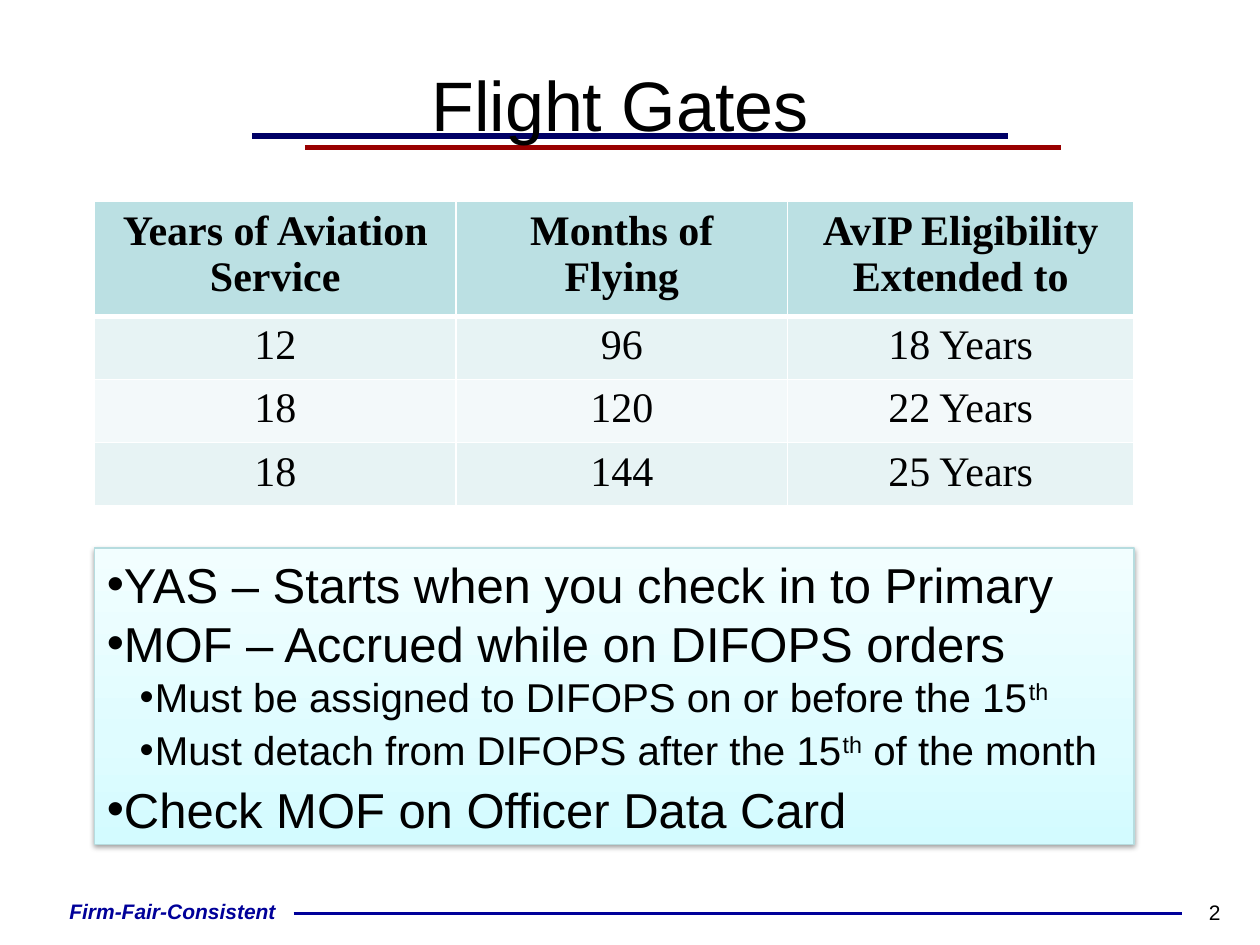
from dataclasses import dataclass

from lxml import etree
from pptx import Presentation
from pptx.dml.color import RGBColor
from pptx.enum.shapes import MSO_CONNECTOR, MSO_SHAPE
from pptx.enum.text import MSO_ANCHOR, PP_ALIGN
from pptx.oxml import parse_xml
from pptx.oxml.ns import nsdecls, qn
from pptx.util import Inches, Pt

LINE = MSO_CONNECTOR.STRAIGHT
RECT = MSO_SHAPE.RECTANGLE
MID, TOP = MSO_ANCHOR.MIDDLE, MSO_ANCHOR.TOP
CENTER = PP_ALIGN.CENTER
SANS, SERIF = "Arial", "Times New Roman"
NAVY = "000099"


@dataclass
class Rule:
    left: float
    right: float
    y: float
    color: str
    width: float


@dataclass
class Label:
    text: str
    box: tuple
    font: dict
    anchor: int = TOP
    inset: bool = True


@dataclass
class Point:
    level: int
    runs: tuple  # every second run is superscript


RULES = [
    Rule(2, 8, 1.08, "000066", 3),
    Rule(2.42, 8.42, 1.17, "990000", 3),
    Rule(2.33, 9.38, 7.25, NAVY, 2.25),
]
LABELS = [
    Label("2", (9.32, 7.09, 0.64, 0.3), {"size": 12}),
    Label("Firm-Fair-Consistent", (0.33, 7.08, 2.08, 0.3),
          {"size": 12, "color": NAVY, "bold": True, "italic": True}, MID, False),
    Label("Flight Gates", (0.42, 0.36, 9, 0.92), {"size": 40}, MID),
]
GATES = [
    ("Years of Aviation Service", "Months of Flying", "AvIP Eligibility Extended to"),
    ("12", "96", "18 Years"),
    ("18", "120", "22 Years"),
    ("18", "144", "25 Years"),
]
COLS = [2.87, 2.63, 2.75]
ROWS = [0.91, 0.5, 0.5, 0.5]
FILLS = ["BBE0E3", "E7F3F4", "F3F9FA", "E7F3F4"]
POINTS = [
    Point(1, ("YAS – Starts when you check in to Primary",)),
    Point(1, ("MOF – Accrued while on DIFOPS orders",)),
    Point(2, ("Must be assigned to DIFOPS on or before the 15", "th")),
    Point(2, ("Must detach from DIFOPS after the 15", "th", " of the month")),
    Point(1, ("Check MOF on Officer Data Card",)),
]
# Per level: font size, left indent, space after
LEVELS = {1: (28, 0.12, 0), 2: (23, 0.38, 3)}
STOPS = [(0, "D3FBFF"), (35, "DFFCFF"), (100, "F2FEFF")]


def rgb(code: str) -> RGBColor:
    return RGBColor.from_string(code)


def style(font, size: float, color: str = "000000", **rest) -> None:
    font.color.rgb = rgb(color)
    for key, val in {"name": SANS, "size": Pt(size), **rest}.items():
        setattr(font, key, val)


def draw_rule(slide, rule: Rule) -> None:
    y = Inches(rule.y)
    line = slide.shapes.add_connector(LINE, Inches(rule.left), y, Inches(rule.right), y)
    line.line.color.rgb = rgb(rule.color)
    line.line.width = Pt(rule.width)
    etree.SubElement(line._element.spPr, qn("a:effectLst"))


def draw_label(slide, label: Label) -> None:
    frame = slide.shapes.add_textbox(*map(Inches, label.box)).text_frame
    frame.word_wrap = True
    frame.vertical_anchor = label.anchor
    if not label.inset:
        for side in ("left", "top", "right", "bottom"):
            setattr(frame, f"margin_{side}", 0)
    para = frame.paragraphs[0]
    para.alignment = CENTER
    run = para.add_run()
    run.text = label.text
    style(run.font, **label.font)


def edge(cell, head: bool) -> None:
    props = cell._tc.get_or_add_tcPr()
    for spot, side in enumerate("LRTB"):
        width = Pt(3 if head and side == "B" else 1)
        props.insert(spot, parse_xml(
            f'<a:ln{side} {nsdecls("a")} w="{width}"><a:solidFill>'
            f'<a:srgbClr val="FFFFFF"/></a:solidFill></a:ln{side}>'))


def draw_table(slide) -> None:
    box = map(Inches, (0.75, 1.6, sum(COLS), sum(ROWS)))
    table = slide.shapes.add_table(len(ROWS), len(COLS), *box).table
    for col, width in zip(table.columns, COLS):
        col.width = Inches(width)
    for r, (row, high) in enumerate(zip(table.rows, ROWS)):
        row.height = Inches(high)
        for cell, text in zip(row.cells, GATES[r]):
            cell.fill.solid()
            cell.fill.fore_color.rgb = rgb(FILLS[r])
            edge(cell, r == 0)
            para = cell.text_frame.paragraphs[0]
            para.alignment = CENTER
            run = para.add_run()
            run.text = text
            style(run.font, 24, name=SERIF, bold=r == 0)


def draw_point(para, point: Point) -> None:
    size, left, after = LEVELS[point.level]
    para.alignment = PP_ALIGN.LEFT
    para.level = point.level - 1
    para.space_after = Pt(after)
    props = para._p.get_or_add_pPr()
    props.set("marL", str(Inches(left)))
    props.set("indent", str(Inches(-0.12)))
    etree.SubElement(props, qn("a:buFont"), typeface=SANS)
    etree.SubElement(props, qn("a:buChar"), char="•")
    for i, text in enumerate(point.runs):
        run = para.add_run()
        run.text = text
        style(run.font, size)
        if i % 2:
            run._r.get_or_add_rPr().set("baseline", "30000")


def draw_panel(slide) -> None:
    panel = slide.shapes.add_shape(RECT, *map(Inches, (0.75, 4.35, 8.25, 2.35)))
    panel.line.color.rgb = rgb("B6DCDF")
    panel.line.width = Pt(0.75)

    # Gradient fill and soft shadow
    props = panel._element.spPr
    stops = "".join(f'<a:gs pos="{pos * 1000}"><a:srgbClr val="{code}"/></a:gs>'
                    for pos, code in STOPS)
    props.find(qn("a:prstGeom")).addnext(parse_xml(
        f'<a:gradFill {nsdecls("a")} rotWithShape="1"><a:gsLst>{stops}</a:gsLst>'
        '<a:lin ang="16200000" scaled="0"/></a:gradFill>'))
    props.append(parse_xml(
        f'<a:effectLst {nsdecls("a")}><a:outerShdw blurRad="{Pt(3.1)}" '
        f'dist="{Pt(1.6)}" dir="5400000" rotWithShape="0"><a:srgbClr val="000000">'
        '<a:alpha val="38000"/></a:srgbClr></a:outerShdw></a:effectLst>'))

    frame = panel.text_frame
    frame.word_wrap = True
    frame.vertical_anchor = MID
    for i, point in enumerate(POINTS):
        draw_point(frame.add_paragraph() if i else frame.paragraphs[0], point)


def main() -> None:
    deck = Presentation()
    deck.slide_width, deck.slide_height = Inches(10), Inches(7.5)
    slide = deck.slides.add_slide(deck.slide_layouts[6])

    # Rules, footer and title
    for rule in RULES:
        draw_rule(slide, rule)
    for label in LABELS:
        draw_label(slide, label)

    # Gate table and notes panel
    draw_table(slide)
    draw_panel(slide)
    deck.save("out.pptx")


if __name__ == "__main__":
    main()
